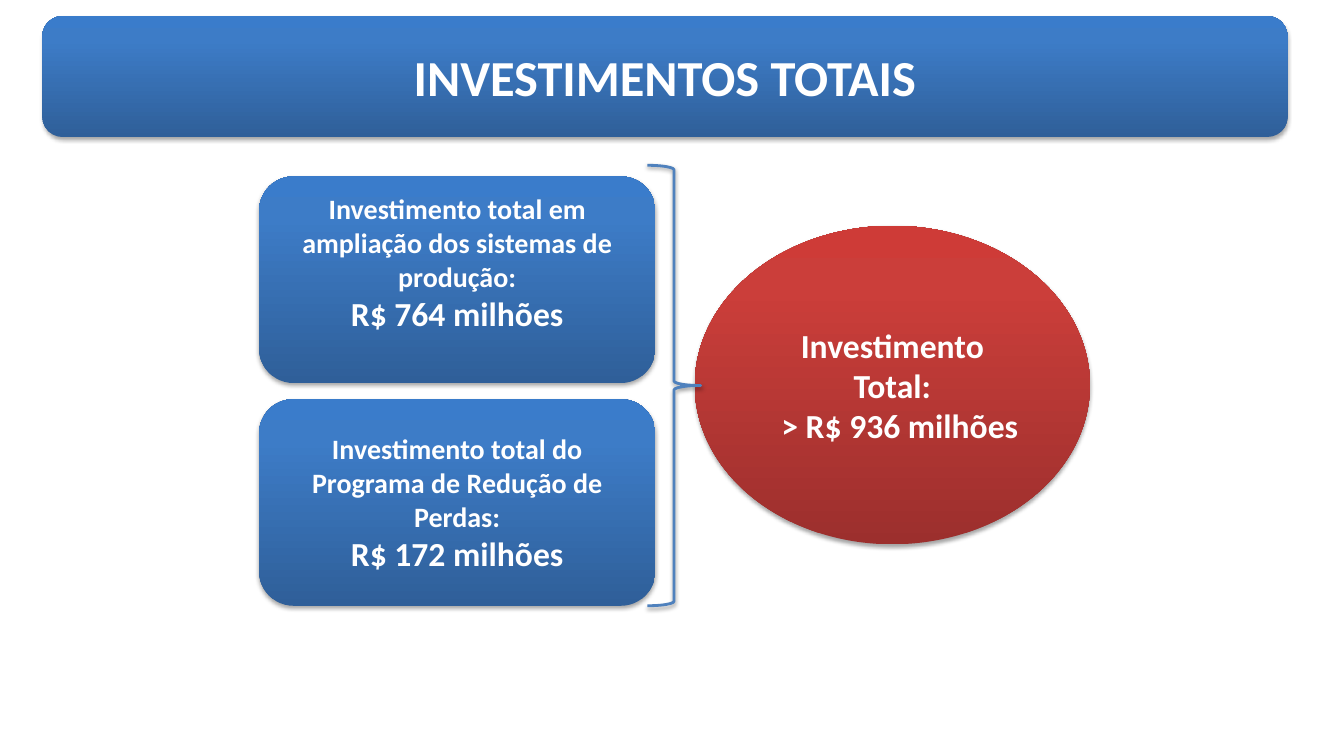
import pptx
import pptx.util
import pptx.dml.color
import pptx.enum.shapes
import pptx.enum.text
import pptx.oxml
import pptx.oxml.ns

Inches = pptx.util.Inches
Pt = pptx.util.Pt
SHAPES = pptx.enum.shapes.MSO_SHAPE

# Content: each line is (text, size, left indent in inches)
TITLE = [("INVESTIMENTOS TOTAIS", 36, 0)]
PARTS = [
    # lines, bottom inset in inches
    ([("Investimento total em ampliação dos sistemas de produção:", 20, 0),
      ("R$ 764 milhões", 24, 0)], 0.39),
    ([("Investimento total do Programa de Redução de Perdas:", 20, 0),
      ("R$ 172 milhões", 24, 0)], 0.05),
]
TOTAL = [("Investimento Total:", 24, 0), ("> R$ 936 milhões", 24, 0.15)]

FONT = "Calibri"
COLORS = {"text": "FFFFFF", "brace": "4F81BD", "shadow": "000000"}
GRADIENTS = {
    "blue": [(0, "2F5F99"), (80, "3D7CC7"), (100, "3A7CCB")],
    "red": [(0, "9C2F2D"), (80, "CB3E3A"), (100, "CE3B37")],
}

# Stacked boxes
PART_LEFT, PART_TOP, PART_WIDTH, PART_HEIGHT, PART_GAP = 2.57, 1.75, 3.93, 2.05, 0.16


def rgb(name):
    return pptx.dml.color.RGBColor.from_string(COLORS[name])


def add_shadow(shape, opacity, distance):
    shape.shadow.inherit = False
    effects = shape._element.spPr.find(pptx.oxml.ns.qn("a:effectLst"))
    effects.append(pptx.oxml.parse_xml(
        f'<a:outerShdw {pptx.oxml.ns.nsdecls("a")} blurRad="{Pt(3.1)}" '
        f'dist="{Pt(distance)}" dir="5400000" rotWithShape="0">'
        f'<a:srgbClr val="{COLORS["shadow"]}"><a:alpha val="{opacity * 1000}"/>'
        '</a:srgbClr></a:outerShdw>'))


def fill_gradient(shape, stops):
    shape.fill.gradient()
    shape.fill.gradient_angle = 90
    stop_list = shape._element.spPr.find(".//" + pptx.oxml.ns.qn("a:gsLst"))
    for stop in list(stop_list):
        stop_list.remove(stop)
    for position, color in stops:
        stop_list.append(pptx.oxml.parse_xml(
            f'<a:gs {pptx.oxml.ns.nsdecls("a")} pos="{position * 1000}">'
            f'<a:srgbClr val="{color}"/></a:gs>'))


def add_panel(slide, kind, place, gradient, lines, bottom_inset=0.05):
    panel = slide.shapes.add_shape(kind, *map(Inches, place))
    fill_gradient(panel, GRADIENTS[gradient])
    panel.line.fill.background()
    add_shadow(panel, 35, 1.8)
    frame = panel.text_frame
    frame.word_wrap = True
    frame.vertical_anchor = pptx.enum.text.MSO_ANCHOR.MIDDLE
    frame.margin_bottom = Inches(bottom_inset)
    for index, (text, size, indent) in enumerate(lines):
        para = frame.add_paragraph() if index else frame.paragraphs[0]
        para.alignment = pptx.enum.text.PP_ALIGN.CENTER
        if indent:
            para._p.get_or_add_pPr().set("marL", str(Inches(indent)))
        span = para.add_run()
        span.text = text
        span.font.name = FONT
        span.font.size = Pt(size)
        span.font.bold = True
        span.font.color.rgb = rgb("text")


deck = pptx.Presentation()
deck.slide_width, deck.slide_height = Inches(13.33), Inches(7.5)
page = deck.slides.add_slide(deck.slide_layouts[6])

# Title banner
add_panel(page, SHAPES.ROUNDED_RECTANGLE, (0.42, 0.16, 12.35, 1.2), "blue", TITLE)

# Two investment parts
for row, (lines, inset) in enumerate(PARTS):
    top = PART_TOP + row * (PART_HEIGHT + PART_GAP)
    add_panel(page, SHAPES.ROUNDED_RECTANGLE,
              (PART_LEFT, top, PART_WIDTH, PART_HEIGHT), "blue", lines, inset)

# Total
add_panel(page, SHAPES.OVAL, (6.89, 2.24, 3.92, 3.16), "red", TOTAL)

# Brace joining the parts to the total
brace = page.shapes.add_shape(SHAPES.RIGHT_BRACE, *map(Inches, (6.42, 1.64, 0.53, 4.37)))
brace.fill.background()
brace.line.color.rgb = rgb("brace")
brace.line.width = Pt(2)
add_shadow(brace, 38, 1.6)

deck.save("out.pptx")
